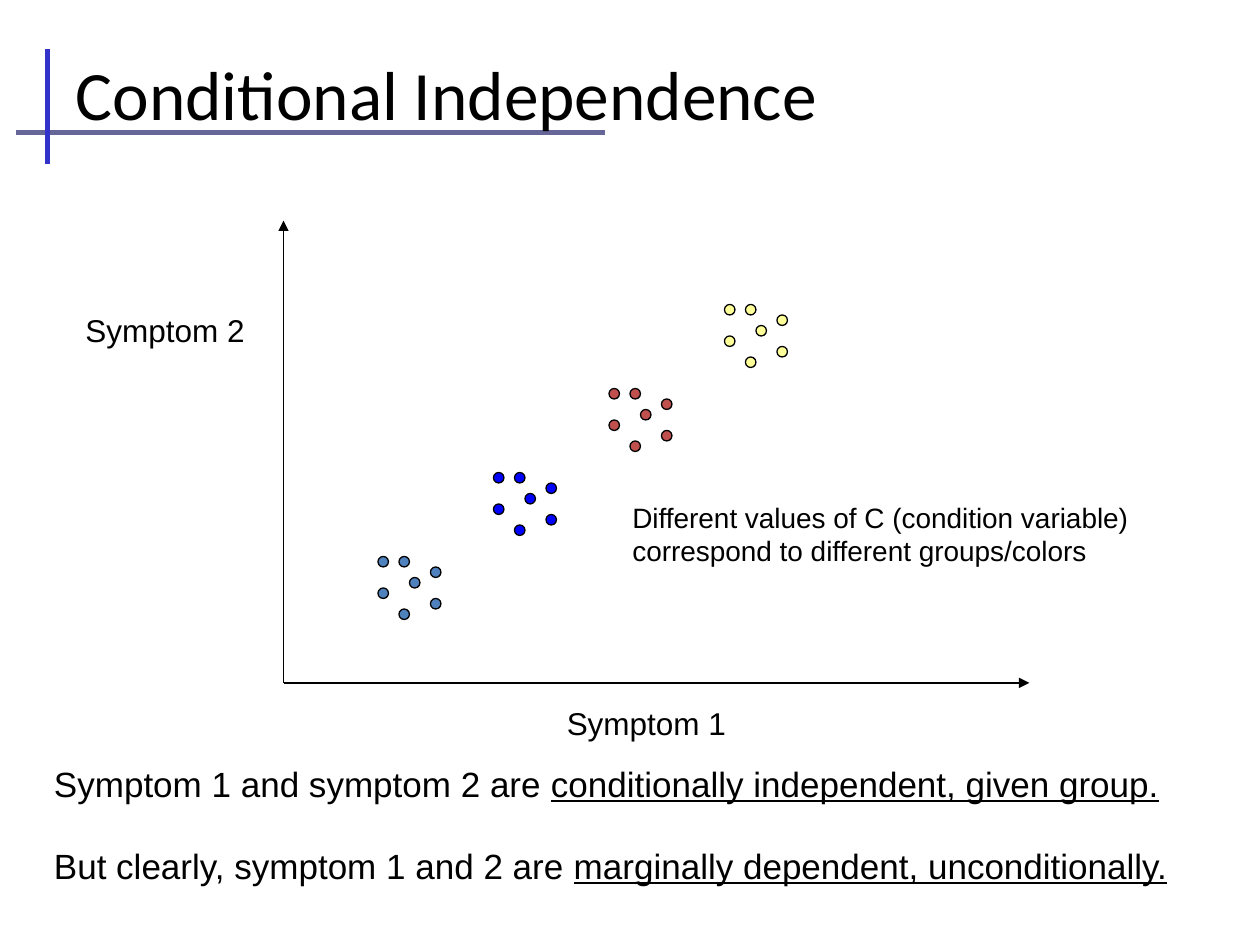
from lxml.etree import SubElement
from pptx import Presentation
from pptx.dml.color import RGBColor
from pptx.enum.shapes import MSO_CONNECTOR, MSO_SHAPE
from pptx.enum.text import MSO_ANCHOR, PP_ALIGN
from pptx.oxml.ns import qn
from pptx.util import Inches, Pt

# Content
TITLE = "Conditional Independence"
COLORS = {
    "text": "000000", "rule": "666699", "bar": "3333CC",
    "steel": "4F81BD", "blue": "0000FF", "red": "C0504D", "yellow": "FFFF99",
}
TITLE_LINES = [  # start, end, color
    ((0.13, 1.05), (4.8, 1.05), "rule"),
    ((0.38, 1.3), (0.38, 0.39), "bar"),
]
ORIGIN = (2.25, 5.42)
AXIS_ENDS = [(2.25, 1.75), (8.17, 5.42)]
GROUPS = ["steel", "blue", "red", "yellow"]
# Dot positions inside a group, in grid units
DOTS = [(0, 0), (0, 3), (2, 0), (3, 2), (5, 4), (2, 5), (5, 1)]
UNIT = 1 / 12
FIRST_GROUP = (36, 53)
GROUP_STEP = (11, -8)
# Each paragraph is a list of (text, underlined) runs
LABELS = [  # left, top, width, height, size, wrap, space between, paragraphs
    (4.4, 5.54, 1.47, 0.4, 18, False, 0, [[("Symptom 1", False)]]),
    (0.58, 2.42, 1.47, 0.4, 18, False, 0, [[("Symptom 2", False)]]),
    (4.92, 3.92, 4.19, 0.64, 16, False, 0, [
        [("Different values of C (condition variable)", False)],
        [("correspond to different groups/colors", False)],
    ]),
    (0.33, 6, 9.17, 1.11, 20, True, 23, [
        [("Symptom 1 and symptom 2 are ", False),
         ("conditionally independent, given group.", True)],
        [("But clearly, symptom 1 and 2 are ", False),
         ("marginally dependent, unconditionally.", True)],
    ]),
]


def color(name):
    return RGBColor.from_string(COLORS[name])


def add_run(paragraph, text, font_name, size, underline=False):
    run = paragraph.add_run()
    run.text = text
    run.font.name = font_name
    run.font.size = Pt(size)
    run.font.color.rgb = color("text")
    if underline:
        run.font.underline = True


def add_line(slide, start, end, color_name, width, arrow=False):
    connector = slide.shapes.add_connector(
        MSO_CONNECTOR.STRAIGHT, *(Inches(value) for value in start + end))
    connector.line.color.rgb = color(color_name)
    connector.line.width = Pt(width)
    properties = connector._element.spPr
    if arrow:
        SubElement(properties.find(qn("a:ln")), qn("a:tailEnd"), type="triangle")
    SubElement(properties, qn("a:effectLst"))


def add_dot(slide, column, row, color_name):
    dot = slide.shapes.add_shape(
        MSO_SHAPE.OVAL, Inches(column * UNIT), Inches(row * UNIT),
        Inches(UNIT), Inches(UNIT))
    dot.shadow.inherit = False
    dot.fill.solid()
    dot.fill.fore_color.rgb = color(color_name)
    dot.line.color.rgb = color("text")
    dot.line.width = Pt(0.75)


def add_label(slide, left, top, width, height, size, wrap, gap, paragraphs):
    box = slide.shapes.add_textbox(
        Inches(left), Inches(top), Inches(width), Inches(height))
    frame = box.text_frame
    frame.word_wrap = wrap
    for index, runs in enumerate(paragraphs):
        paragraph = frame.add_paragraph() if index else frame.paragraphs[0]
        if index and gap:
            paragraph.space_before = Pt(gap)
        for text, underline in runs:
            add_run(paragraph, text, "Arial", size, underline)


def main():
    presentation = Presentation()
    presentation.slide_width = Inches(10)
    presentation.slide_height = Inches(7.5)
    slide = presentation.slides.add_slide(presentation.slide_layouts[5])

    # Title, in front of its decorative lines
    for start, end, color_name in TITLE_LINES:
        add_line(slide, start, end, color_name, 3)
    title = slide.shapes.title
    title.left, title.top = Inches(0.5), Inches(0.33)
    title.width, title.height = Inches(9), Inches(0.82)
    title.text_frame.vertical_anchor = MSO_ANCHOR.MIDDLE
    paragraph = title.text_frame.paragraphs[0]
    paragraph.alignment = PP_ALIGN.LEFT
    add_run(paragraph, TITLE, "Calibri", 39.6)
    slide.shapes._spTree.append(title._element)

    # Axes
    for end in AXIS_ENDS:
        add_line(slide, ORIGIN, end, "text", 0.75, arrow=True)

    # Groups of dots along the diagonal
    for index, color_name in enumerate(GROUPS):
        left, top = (first + index * step
                     for first, step in zip(FIRST_GROUP, GROUP_STEP))
        for column, row in DOTS:
            add_dot(slide, left + column, top + row, color_name)

    # Axis names, note and conclusions
    for label in LABELS:
        add_label(slide, *label)

    presentation.save("out.pptx")


if __name__ == "__main__":
    main()
